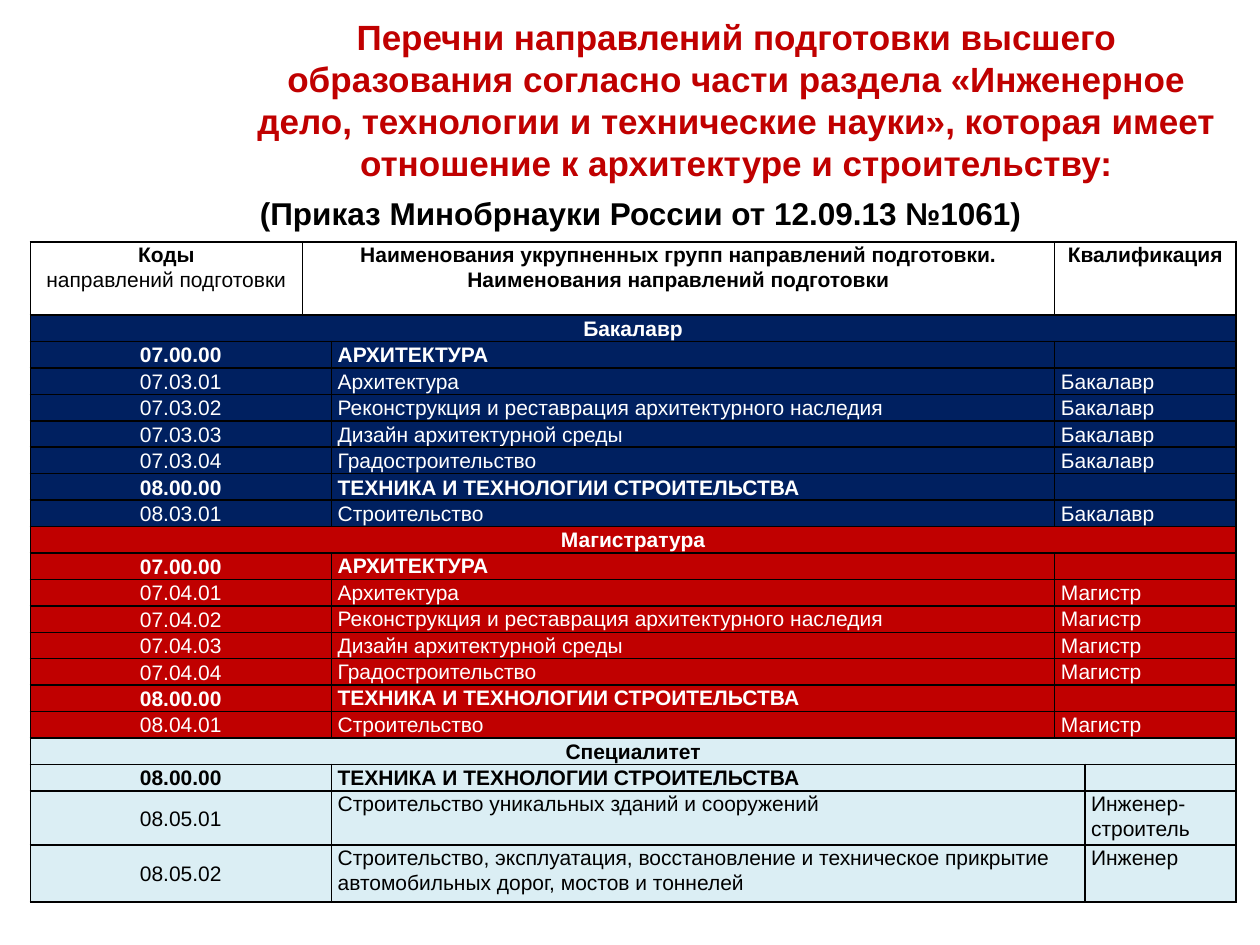
from lxml.etree import SubElement
from pptx import Presentation
from pptx.dml.color import RGBColor
from pptx.enum.text import MSO_ANCHOR, PP_ALIGN
from pptx.oxml.ns import qn
from pptx.util import Inches, Pt

COLORS = {"red": "C00000", "navy": "002060", "ice": "DBEEF4",
          "black": "000000", "white": "FFFFFF"}
COLUMN_WIDTHS = [2.16, 0.23, 5.74, 0.24, 1.2]
HEADER_HEIGHT, ROW_HEIGHT = 0.58, 0.21
TALL_ROWS = {"08.05.01": 0.43, "08.05.02": 0.45}

ARCHITECTURE = "АРХИТЕКТУРА"
CONSTRUCTION = "ТЕХНИКА И ТЕХНОЛОГИИ СТРОИТЕЛЬСТВА"
ARCHITECTURE_FIELDS = ["Архитектура", "Реконструкция и реставрация архитектурного наследия",
                       "Дизайн архитектурной среды", "Градостроительство"]


def degree_rows(level, qualification):
    fields = [(f"07.{level}.{number:02}", name, qualification)
              for number, name in enumerate(ARCHITECTURE_FIELDS, 1)]
    return [("07.00.00", ARCHITECTURE, ""), *fields, ("08.00.00", CONSTRUCTION, ""),
            (f"08.{level}.01", "Строительство", qualification)]


SPECIALIST_ROWS = [
    ("08.00.00", CONSTRUCTION, ""),
    ("08.05.01", "Строительство уникальных зданий и сооружений", "Инженер-строитель"),
    ("08.05.02", "Строительство, эксплуатация, восстановление и техническое прикрытие "
                 "автомобильных дорог, мостов и тоннелей", "Инженер"),
]
# Heading, rows, fill, text colour, anchor of the names, first column of the qualification
SECTIONS = [
    ("Бакалавр", degree_rows("03", "Бакалавр"), "navy", "white", MSO_ANCHOR.MIDDLE, 3),
    ("Магистратура", degree_rows("04", "Магистр"), "red", "white", MSO_ANCHOR.TOP, 3),
    ("Специалитет", SPECIALIST_ROWS, "ice", "black", MSO_ANCHOR.TOP, 4),
]


class SlideBuilder:
    font_name = "Arial"
    table_size = 12

    def __init__(self, slide):
        self.slide = slide

    def color(self, name):
        return RGBColor.from_string(COLORS[name])

    def set_text(self, text_frame, text, size, color, bold, align):
        text_frame.text = text
        for paragraph in text_frame.paragraphs:
            paragraph.alignment = align
            for run in paragraph.runs:
                run.font.name = self.font_name
                run.font.size = Pt(size)
                run.font.bold = bold
                run.font.color.rgb = self.color(color)

    def heading(self, shape, text, box, size, color):
        shape.left, shape.top, shape.width, shape.height = map(Inches, box)
        shape.text_frame.word_wrap = True
        shape.text_frame.vertical_anchor = MSO_ANCHOR.TOP
        self.set_text(shape.text_frame, text, size, color, True, PP_ALIGN.CENTER)

    def title(self, text, box, size, color):
        self.heading(self.slide.shapes.title, text, box, size, color)

    def text_box(self, text, box, size, color):
        shape = self.slide.shapes.add_textbox(*map(Inches, box))
        self.heading(shape, text, box, size, color)

    def table(self, left, top, widths, heights):
        frame = self.slide.shapes.add_table(len(heights), len(widths), Inches(left), Inches(top),
                                            Inches(sum(widths)), Inches(sum(heights)))
        table = frame.table
        table.first_row = table.horz_banding = False
        for column, width in zip(table.columns, widths):
            column.width = Inches(width)
        for row, height in zip(table.rows, heights):
            row.height = Inches(height)
        for cell in table.iter_cells():
            self.prepare_cell(cell)
        return table

    def prepare_cell(self, cell):
        cell.margin_left = cell.margin_right = Inches(0.05)
        cell.margin_top = cell.margin_bottom = 0
        properties = cell._tc.get_or_add_tcPr()
        for side in ("lnL", "lnR", "lnT", "lnB"):
            line = SubElement(properties, qn(f"a:{side}"), w=str(Pt(1)))
            fill = SubElement(line, qn("a:solidFill"))
            SubElement(fill, qn("a:srgbClr"), val=COLORS["black"])
        cell.fill.background()
        # Keeps empty cells as low as the filled ones
        SubElement(cell.text_frame.paragraphs[0]._p, qn("a:endParaRPr"),
                   sz=str(self.table_size * 100))

    def cell(self, table, row, first, last, text, color="black", fill=None, bold=False,
             align=PP_ALIGN.CENTER, anchor=MSO_ANCHOR.MIDDLE):
        cell = table.cell(row, first)
        if last > first:
            cell.merge(table.cell(row, last))
        if fill:
            cell.fill.solid()
            cell.fill.fore_color.rgb = self.color(fill)
        cell.vertical_anchor = anchor
        if text:
            self.set_text(cell.text_frame, text, self.table_size, color, bold, align)
        for paragraph in cell.text_frame.paragraphs:
            paragraph.line_spacing = 1.07
        return cell


def main():
    presentation = Presentation()
    presentation.slide_width, presentation.slide_height = Inches(10), Inches(7.5)
    builder = SlideBuilder(presentation.slides.add_slide(presentation.slide_layouts[5]))

    # Title
    builder.title("Перечни направлений подготовки высшего образования согласно части раздела "
                  "«Инженерное дело, технологии и технические науки», которая имеет отношение "
                  "к архитектуре и строительству:", (1.87, 0.07, 7.95, 0.64), 20, "red")

    # Table grid
    heights = [HEADER_HEIGHT]
    for _, rows, *_ in SECTIONS:
        heights += [ROW_HEIGHT] + [TALL_ROWS.get(code, ROW_HEIGHT) for code, _, _ in rows]
    table = builder.table(0.24, 1.92, COLUMN_WIDTHS, heights)

    # Table header
    headers = [(0, 0, "Коды\nнаправлений подготовки"),
               (1, 2, "Наименования укрупненных групп направлений подготовки.\n"
                      "Наименования направлений подготовки"),
               (3, 4, "Квалификация")]
    for first, last, text in headers:
        builder.cell(table, 0, first, last, text, bold=True, anchor=MSO_ANCHOR.TOP)
    table.cell(0, 0).text_frame.paragraphs[1].runs[0].font.bold = False

    # Table sections
    row = 1
    for heading, rows, fill, color, anchor, split in SECTIONS:
        builder.cell(table, row, 0, 4, heading, color, fill, True)
        for row, (code, name, qualification) in enumerate(rows, row + 1):
            bold = code.endswith("00.00")
            builder.cell(table, row, 0, 1, code, color, fill, bold)
            builder.cell(table, row, 2, split - 1, name, color, fill, bold,
                         PP_ALIGN.LEFT, anchor)
            builder.cell(table, row, split, 4, qualification, color, fill, False,
                         PP_ALIGN.LEFT, anchor)
        row += 1

    # Order reference
    builder.text_box("(Приказ Минобрнауки России от 12.09.13 №1061)",
                     (0.15, 1.49, 9.87, 0.4), 18, "black")
    presentation.save("out.pptx")


if __name__ == "__main__":
    main()
